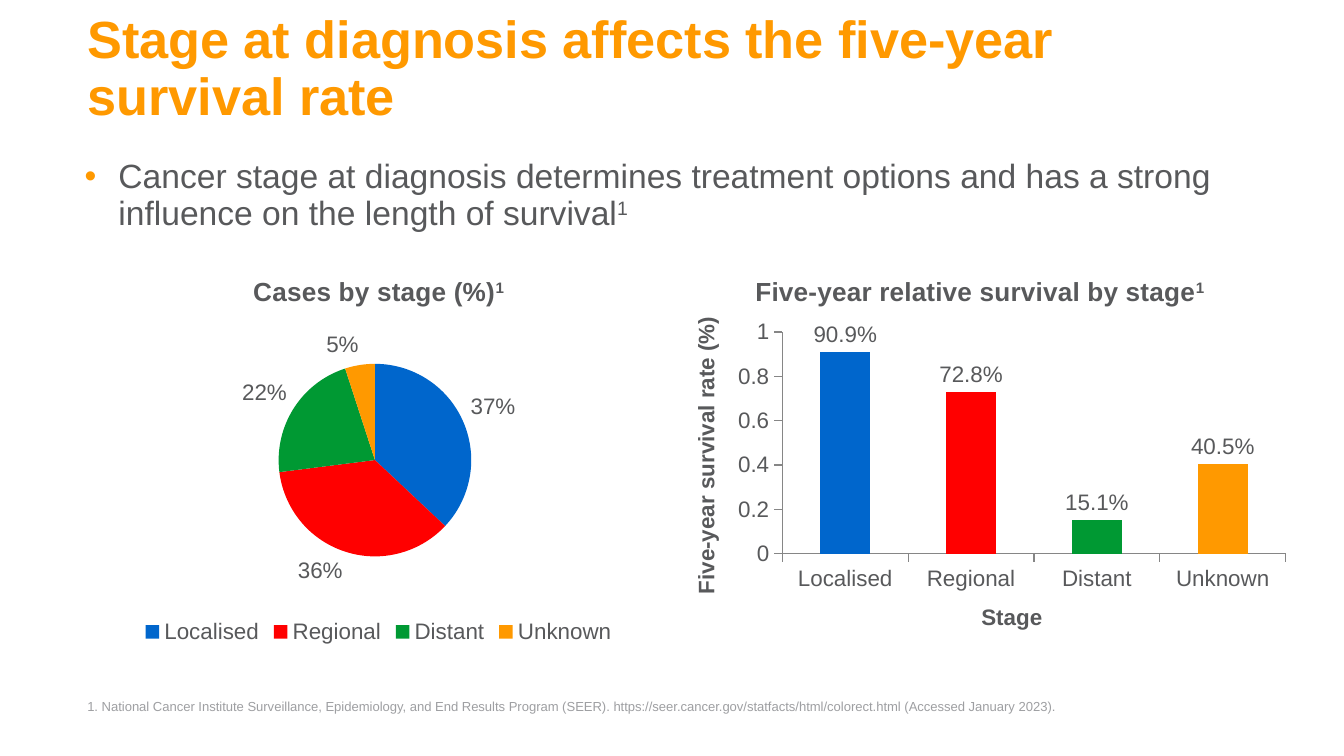
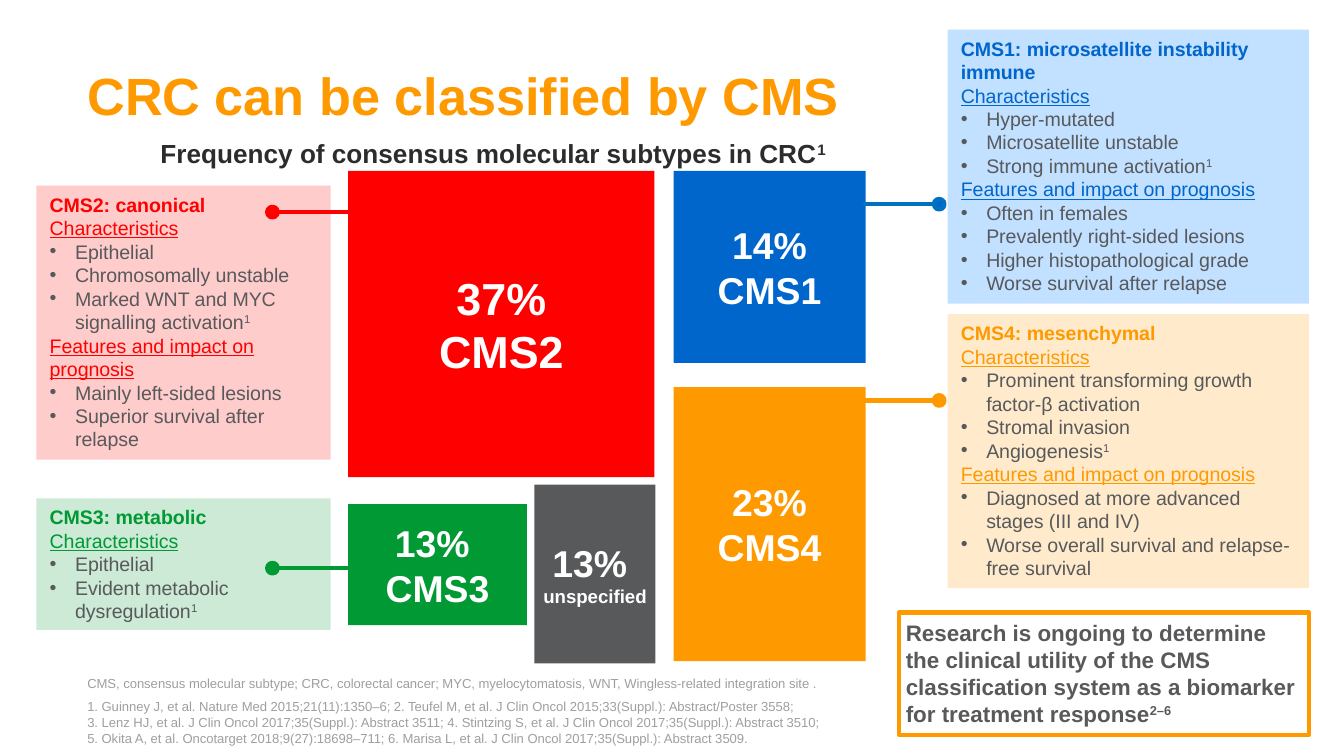
from lxml import etree
from pptx import Presentation
from pptx.chart.data import CategoryChartData
from pptx.dml.color import RGBColor
from pptx.enum.chart import XL_CHART_TYPE, XL_LABEL_POSITION, XL_LEGEND_POSITION, XL_TICK_MARK
from pptx.enum.shapes import MSO_CONNECTOR, MSO_SHAPE
from pptx.enum.text import MSO_ANCHOR, MSO_AUTO_SIZE, PP_ALIGN
from pptx.oxml.ns import qn
from pptx.util import Cm, Pt

PIE, COLUMN = XL_CHART_TYPE.PIE, XL_CHART_TYPE.COLUMN_CLUSTERED
OUTSIDE_END, LEGEND_BOTTOM = XL_LABEL_POSITION.OUTSIDE_END, XL_LEGEND_POSITION.BOTTOM
TICK_OUT, TICK_NONE = XL_TICK_MARK.OUTSIDE, XL_TICK_MARK.NONE
RECT, OVAL, STRAIGHT = MSO_SHAPE.RECTANGLE, MSO_SHAPE.OVAL, MSO_CONNECTOR.STRAIGHT
TOP, MIDDLE, BOTTOM = MSO_ANCHOR.TOP, MSO_ANCHOR.MIDDLE, MSO_ANCHOR.BOTTOM
LEFT, CENTER = PP_ALIGN.LEFT, PP_ALIGN.CENTER
NO_FIT = MSO_AUTO_SIZE.NONE

FONT = "Arial"
COLORS = {
    "orange": "FF9900", "blue": "0066CC", "red": "FF0000", "green": "009933",
    "gray": "58595B", "note": "9E9FA2", "ink": "2C2C2D", "white": "FFFFFF",
    "axis": "868686", "link_blue": "0070C0",
    "pale_blue": "C2E0FF", "pale_red": "FFCCCC", "pale_orange": "FFEBCC",
}
STAGES = ["Localised", "Regional", "Distant", "Unknown"]
STAGE_COLORS = ["blue", "red", "green", "orange"]
TITLE_LEFT, NOTE_TOP = 1.65, 13.21
TILE_INSET = (0.13, 0.13)
CARD_INSET = (0.25, 0.13)


def rgb(name):
    return RGBColor.from_string(COLORS[name])


class Deck:
    """Holds the presentation style and the slide being built."""

    def __init__(self):
        self.prs = Presentation()
        self.prs.slide_width, self.prs.slide_height = Cm(25.4), Cm(14.29)
        self.slide = None

    # Text
    def style_font(self, font, color, size, **extra):
        for attr, value in {"name": FONT, "size": Pt(size), **extra}.items():
            setattr(font, attr, value)
        font.color.rgb = rgb(color)

    def paragraph(self, frame, text, color, size, first=False, bullet=None,
                  indent=0.48, layout=None, **font):
        """Write one paragraph; what follows ^ is superscript."""
        para = frame.paragraphs[0] if first else frame.add_paragraph()
        for attr, value in {"alignment": LEFT, **(layout or {})}.items():
            setattr(para, attr, value)
        base, _, raised = text.partition("^")
        for part in filter(None, (base, raised)):
            run = para.add_run()
            run.text = part
            self.style_font(run.font, color, size, **font)
            if part is raised:
                run.font._element.set("baseline", "30000")
        if bullet:
            props = para._p.get_or_add_pPr()
            props.set("marL", str(Cm(indent)))
            props.set("indent", str(-Cm(indent)))
            bullet_color = etree.SubElement(props, qn("a:buClr"))
            etree.SubElement(bullet_color, qn("a:srgbClr")).set("val", COLORS[bullet])
            etree.SubElement(props, qn("a:buFont")).set("typeface", FONT)
            etree.SubElement(props, qn("a:buChar")).set("char", "•")

    def frame(self, shape, inset=(0, 0), anchor=TOP):
        frame = shape.text_frame
        side, edge = map(Cm, inset)
        settings = {"word_wrap": True, "auto_size": NO_FIT, "vertical_anchor": anchor,
                    "margin_left": side, "margin_right": side,
                    "margin_top": edge, "margin_bottom": edge}
        for attr, value in settings.items():
            setattr(frame, attr, value)
        return frame

    def new_slide(self, title, width):
        self.slide = self.prs.slides.add_slide(self.prs.slide_layouts[5])
        heading = self.slide.shapes.title
        place = {"left": TITLE_LEFT, "top": 0.76, "width": width, "height": 1.63}
        for attr, value in place.items():
            setattr(heading, attr, Cm(value))
        self.paragraph(self.frame(heading, anchor=BOTTOM), title, "orange", 28, first=True,
                       bold=True, layout={"line_spacing": 0.9})

    def text(self, box, lines, color, size, inset=(0, 0), anchor=TOP, **options):
        frame = self.frame(self.slide.shapes.add_textbox(*map(Cm, box)), inset, anchor)
        for i, line in enumerate(lines):
            self.paragraph(frame, line, color, size, first=i == 0, **options)

    def footnote(self, width, *lines):
        self.text((TITLE_LEFT, NOTE_TOP, width, 1.02), lines, "note", 7)

    # Shapes
    def block(self, box, fill=None, line=None, kind=RECT, alpha=None):
        shape = self.slide.shapes.add_shape(kind, *map(Cm, box))
        shape.shadow.inherit = False
        if fill:
            shape.fill.solid()
            shape.fill.fore_color.rgb = rgb(fill)
        else:
            shape.fill.background()
        if alpha:
            swatch = shape._element.spPr.find(qn("a:solidFill"))[0]
            etree.SubElement(swatch, qn("a:alpha")).set("val", str(alpha * 1000))
        if line:
            shape.line.color.rgb = rgb(line)
            shape.line.width = Pt(2.25)
        else:
            shape.line.fill.background()
        return shape

    def tile(self, box, fill, share, label, size=20, label_size=None):
        frame = self.frame(self.block(box, fill), TILE_INSET, MIDDLE)
        centred = {"bold": True, "layout": {"alignment": CENTER}}
        self.paragraph(frame, share, "white", size, first=True, **centred)
        self.paragraph(frame, label, "white", label_size or size, **centred)

    def card(self, box, fill, color, heading, sections, alpha=None):
        frame = self.frame(self.block(box, fill, alpha=alpha), CARD_INSET)
        self.paragraph(frame, heading, color, 10.5, first=True, bold=True)
        for section, points in sections.items():
            self.paragraph(frame, section, color, 10.5, underline=True)
            for point in points:
                self.paragraph(frame, point, "gray", 10.5, bullet="gray")

    def callout(self, start, end, y, color, line=None):
        """Line from a tile to a dot beside its card."""
        line = line or color
        size = 0.2
        centre = end + (0.05 if end > start else -0.05)
        self.block((centre - size / 2, y - size / 2, size, size), color, line, OVAL)
        link = self.slide.shapes.add_connector(STRAIGHT, *map(Cm, (start, y, end, y)))
        link.line.color.rgb = rgb(line)
        link.line.width = Pt(2.25)
        etree.SubElement(link._element.spPr, qn("a:effectLst"))

    # Charts
    def chart(self, kind, box, title, values, label_format, plot_box):
        data = CategoryChartData()
        data.categories = STAGES
        data.add_series("Series 1", values)
        chart = self.slide.shapes.add_chart(kind, *map(Cm, box), data).chart
        self.style_font(chart.font, "gray", 12)
        chart.has_title = True
        self.paragraph(chart.chart_title.text_frame, title, "gray", 14, first=True,
                       bold=True, layout={"alignment": CENTER})
        chart.chart_title.include_in_layout = False
        chart.has_legend = False

        plot = chart.plots[0]
        plot.vary_by_categories = kind == PIE
        series = plot.series[0]
        for i, color in enumerate(STAGE_COLORS):
            fill = series.points[i].format.fill
            fill.solid()
            fill.fore_color.rgb = rgb(color)
        labels = series.data_labels
        settings = {"show_value": True, "show_percentage": False, "position": OUTSIDE_END,
                    "number_format": label_format, "number_format_is_linked": False}
        for attr, value in settings.items():
            setattr(labels, attr, value)
        self.style_font(labels.font, "gray", 12)

        area = chart._chartSpace.chart.plotArea
        for old in area.findall(qn("c:layout")):
            area.remove(old)
        layout = etree.Element(qn("c:layout"))
        manual = etree.SubElement(layout, qn("c:manualLayout"))
        marks = {"layoutTarget": "inner", "xMode": "edge", "yMode": "edge",
                 **dict(zip("xywh", plot_box))}
        for tag, value in marks.items():
            etree.SubElement(manual, qn("c:" + tag)).set("val", str(value))
        area.insert(0, layout)
        return chart

    def axis(self, axis, title):
        settings = {"has_major_gridlines": False, "major_tick_mark": TICK_OUT,
                    "minor_tick_mark": TICK_NONE, "has_title": True}
        for attr, value in settings.items():
            setattr(axis, attr, value)
        axis.format.line.color.rgb = rgb("axis")
        self.style_font(axis.tick_labels.font, "gray", 12)
        self.paragraph(axis.axis_title.text_frame, title, "gray", 12, first=True,
                       bold=True, layout={"alignment": CENTER})


def survival_slide(deck):
    deck.new_slide("Stage at diagnosis affects the five-year survival rate", 19.2)
    deck.text((1.6, 3.02, 22.15, 1.8),
              ["Cancer stage at diagnosis determines treatment options and has a strong "
               "influence on the length of survival^1"],
              "gray", 18, bullet="orange", indent=0.64,
              layout={"line_spacing": 0.9, "space_before": Pt(6), "space_after": Pt(6)})
    deck.footnote(22.15, "1. National Cancer Institute Surveillance, Epidemiology, and End Results "
                  "Program (SEER). https://seer.cancer.gov/statfacts/html/colorect.html "
                  "(Accessed January 2023).")

    # Cases by stage
    cases = deck.chart(PIE, (0.41, 4.83, 13.49, 7.44), "Cases by stage (%)^1",
                       [0.37, 0.36, 0.22, 0.05], "0%", (0.36, 0.27, 0.27, 0.5))
    cases.has_legend = True
    cases.legend.position = LEGEND_BOTTOM
    cases.legend.include_in_layout = False
    deck.style_font(cases.legend.font, "gray", 12)

    # Survival by stage
    survival = deck.chart(COLUMN, (12.5, 4.83, 12.04, 7.62),
                          "Five-year relative survival by stage^1",
                          [0.909, 0.728, 0.151, 0.405], "0.0%", (0.19, 0.19, 0.79, 0.55))
    survival.plots[0].gap_width = 150
    deck.axis(survival.category_axis, "Stage")
    rate = survival.value_axis
    deck.axis(rate, "Five-year survival rate (%)")
    rate.minimum_scale, rate.maximum_scale, rate.major_unit = 0, 1, 0.2


def subtype_slide(deck):
    traits, prognosis = "Characteristics", "Features and impact on prognosis"
    deck.new_slide("CRC can be classified by CMS", 22.58)
    deck.text((TITLE_LEFT, 2.46, 15.34, 0.86),
              ["Frequency of consensus molecular subtypes in CRC^1"], "ink", 14,
              inset=TILE_INSET, bold=True, layout={"alignment": CENTER})

    # Frequency tiles
    deck.tile((6.58, 3.23, 5.79, 5.79), "red", "37%", "CMS2", size=24)
    deck.tile((6.58, 9.53, 3.38, 2.29), "green", "13% ", "CMS3")
    deck.tile((10.1, 9.16, 2.29, 3.38), "gray", "13% ", "unspecified", label_size=10)
    deck.tile((12.73, 3.23, 3.63, 3.63), "blue", "14%", "CMS1")
    deck.tile((12.73, 7.32, 3.63, 5.18), "orange", "23%", "CMS4")

    # Subtype cards
    deck.card((17.91, 0.56, 6.83, 5.18), "pale_blue", "blue",
              "CMS1: microsatellite instability immune", {
                  traits: ["Hyper-mutated", "Microsatellite unstable",
                           "Strong immune activation^1"],
                  prognosis: ["Often in females", "Prevalently right-sided lesions",
                              "Higher histopathological grade",
                              "Worse survival after relapse"]})
    deck.card((0.69, 3.51, 5.56, 5.18), "pale_red", "red", "CMS2: canonical", {
        traits: ["Epithelial", "Chromosomally unstable",
                 "Marked WNT and MYC signalling activation^1"],
        prognosis: ["Mainly left-sided lesions", "Superior survival after relapse"]})
    deck.card((0.69, 9.42, 5.56, 2.49), "green", "green", "CMS3: metabolic", {
        traits: ["Epithelial", "Evident metabolic dysregulation^1"]}, alpha=20)
    deck.card((17.91, 5.94, 6.83, 5.18), "pale_orange", "orange", "CMS4: mesenchymal", {
        traits: ["Prominent transforming growth factor-β activation", "Stromal invasion",
                 "Angiogenesis^1"],
        prognosis: ["Diagnosed at more advanced stages (III and IV)",
                    "Worse overall survival and relapse-free survival"]})

    # Links between tiles and cards
    deck.callout(6.6, 5.2, 4.01, "red")
    deck.callout(6.6, 5.2, 10.74, "green")
    deck.callout(16.31, 17.7, 3.86, "blue", "link_blue")
    deck.callout(16.31, 17.7, 7.57, "orange")

    # Outlook and notes
    outlook = deck.block((16.99, 11.58, 7.75, 2.31), line="orange")
    deck.paragraph(deck.frame(outlook, TILE_INSET),
                   "Research is ongoing to determine the clinical utility of the CMS "
                   "classification system as a biomarker for treatment response^2–6",
                   "gray", 12, first=True, bold=True)
    deck.text((TITLE_LEFT, 12.22, 15.2, 0.84),
              ["CMS, consensus molecular subtype; CRC, colorectal cancer; MYC, myelocytomatosis, "
               "WNT, Wingless-related integration site ."],
              "note", 7, anchor=BOTTOM, layout={"line_spacing": 0.9})
    deck.footnote(
        14.66,
        "1. Guinney J, et al. Nature Med 2015;21(11):1350–6; 2. Teufel M, et al. "
        "J Clin Oncol 2015;33(Suppl.): Abstract/Poster 3558;",
        "3. Lenz HJ, et al. J Clin Oncol 2017;35(Suppl.): Abstract 3511; 4. Stintzing S, et al. "
        "J Clin Oncol 2017;35(Suppl.): Abstract 3510;",
        "5. Okita A, et al. Oncotarget 2018;9(27):18698–711; 6. Marisa L, et al. "
        "J Clin Oncol 2017;35(Suppl.): Abstract 3509.")


def main():
    deck = Deck()
    survival_slide(deck)
    subtype_slide(deck)
    deck.prs.save("out.pptx")


if __name__ == "__main__":
    main()
